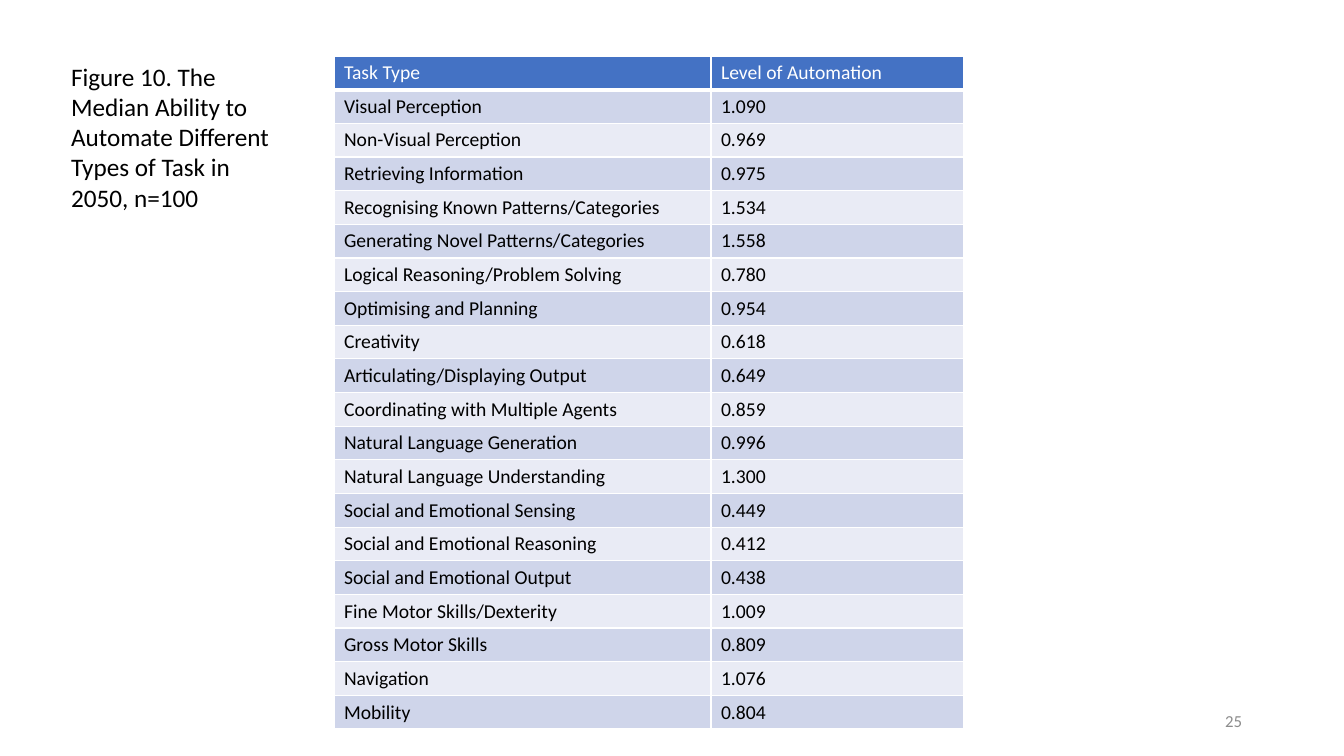
from lxml import etree
from pptx import Presentation
from pptx import util as u
from pptx.dml.color import RGBColor
from pptx.enum import text
from pptx.oxml.ns import qn

THEME = {
    "font": "Calibri",
    "white": "FFFFFF",
    "black": "000000",
    "grey": "8C8C8C",
    "header": "4472C4",
    "bands": ("CFD5EA", "E9EBF5"),
    "caption_size": 18,
    "table_size": 14,
    "number_size": 12,
}
SCALE = 914400 / 100.8

TASKS = [
    ("Task Type", "Level of Automation"),
    ("Visual Perception", "1.090"),
    ("Non-Visual Perception", "0.969"),
    ("Retrieving Information", "0.975"),
    ("Recognising Known Patterns/Categories", "1.534"),
    ("Generating Novel Patterns/Categories", "1.558"),
    ("Logical Reasoning/Problem Solving", "0.780"),
    ("Optimising and Planning", "0.954"),
    ("Creativity", "0.618"),
    ("Articulating/Displaying Output", "0.649"),
    ("Coordinating with Multiple Agents", "0.859"),
    ("Natural Language Generation", "0.996"),
    ("Natural Language Understanding", "1.300"),
    ("Social and Emotional Sensing", "0.449"),
    ("Social and Emotional Reasoning", "0.412"),
    ("Social and Emotional Output", "0.438"),
    ("Fine Motor Skills/Dexterity", "1.009"),
    ("Gross Motor Skills", "0.809"),
    ("Navigation", "1.076"),
    ("Mobility", "0.804"),
]


def px(*lengths):
    """Turn pixel lengths into a list of EMU lengths."""
    return [u.Emu(round(length * SCALE)) for length in lengths]


def write(frame, words, size, color, align=text.PP_ALIGN.LEFT):
    """Set one paragraph of formatted text in a text frame."""
    frame.text = words
    paragraph = frame.paragraphs[0]
    paragraph.alignment = align
    font = paragraph.runs[0].font
    font.color.rgb = RGBColor.from_string(color)
    for name, value in {"name": THEME["font"], "size": u.Pt(size), "bold": False}.items():
        setattr(font, name, value)


prs = Presentation()
prs.slide_width, prs.slide_height = px(1344, 756)
slide = prs.slides.add_slide(prs.slide_layouts.get_by_name("Title Only"))

# Caption
caption = slide.shapes.title
caption.left, caption.top, caption.width, caption.height = px(61, 56, 241, 163)
write(caption.text_frame,
      "Figure 10. The Median Ability to Automate Different Types of Task in 2050, n=100",
      THEME["caption_size"], THEME["black"])
for name, value in {"word_wrap": True, "vertical_anchor": text.MSO_ANCHOR.TOP,
                    "auto_size": text.MSO_AUTO_SIZE.SHAPE_TO_FIT_TEXT}.items():
    setattr(caption.text_frame, name, value)

# Slide number
number = slide.shapes.add_textbox(*px(950, 701, 302, 40)).text_frame
number.word_wrap = True
number.vertical_anchor = text.MSO_ANCHOR.MIDDLE
write(number, "25", THEME["number_size"], THEME["grey"], text.PP_ALIGN.RIGHT)

# Automation levels by task
levels = slide.shapes.add_table(len(TASKS), 2, *px(334, 56, 630, 672)).table
for column, width in zip(levels.columns, px(377, 253)):
    column.width = width

for row, task in enumerate(TASKS):
    is_header = row == 0
    fill = THEME["header"] if is_header else THEME["bands"][(row - 1) % 2]
    color = THEME["white"] if is_header else THEME["black"]
    for col, words in enumerate(task):
        cell = levels.cell(row, col)
        write(cell.text_frame, words, THEME["table_size"], color)
        properties = cell._tc.get_or_add_tcPr()
        for side in ("lnL", "lnR", "lnT", "lnB"):
            points = 3 if is_header and side == "lnB" else 1
            border = etree.SubElement(properties, qn(f"a:{side}"), w=str(u.Pt(points)))
            solid = etree.SubElement(border, qn("a:solidFill"))
            etree.SubElement(solid, qn("a:srgbClr"), val=THEME["white"])
        cell.fill.solid()
        cell.fill.fore_color.rgb = RGBColor.from_string(fill)

prs.save("out.pptx")
